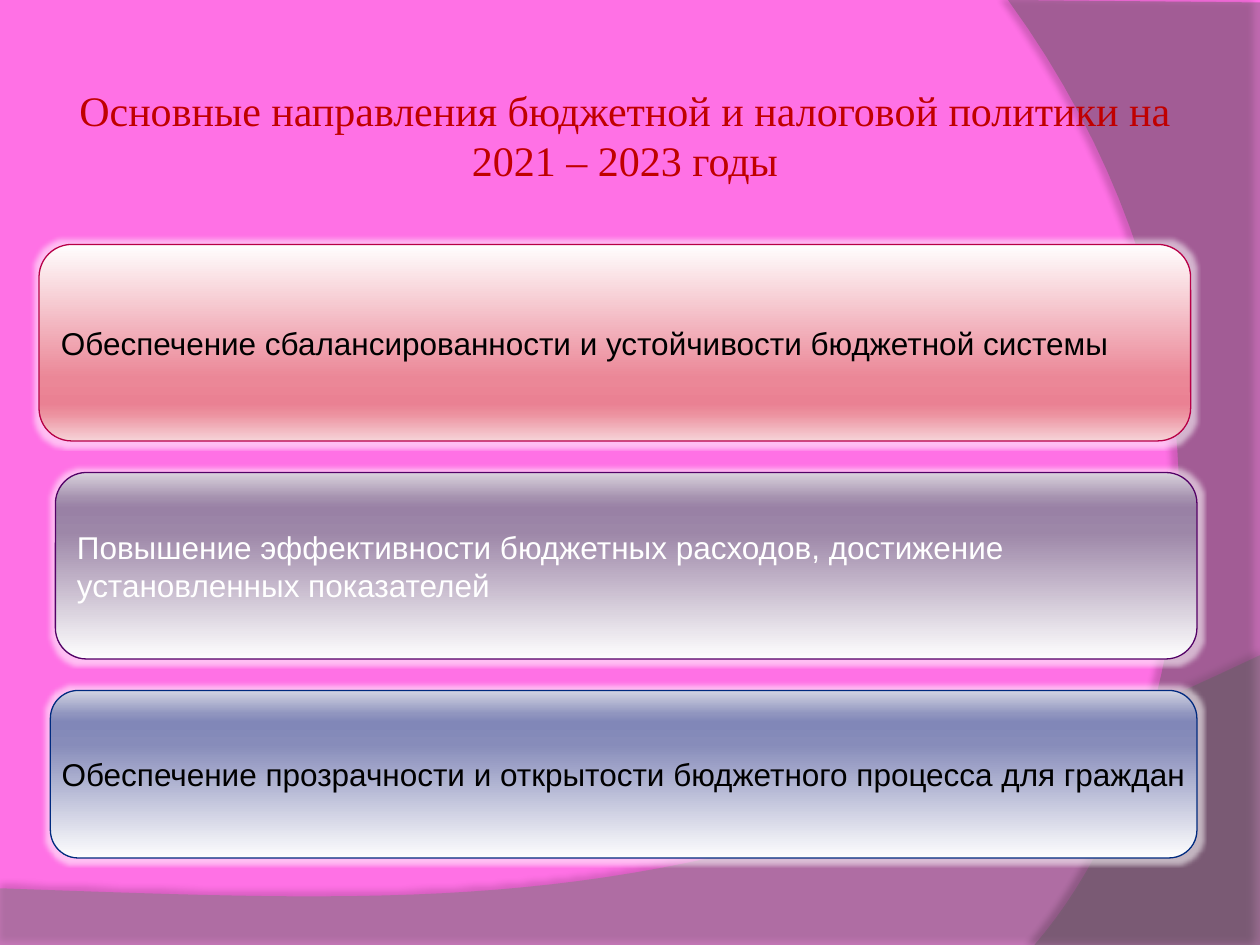
from dataclasses import dataclass

from lxml.etree import SubElement
from pptx import Presentation
from pptx.dml.color import RGBColor
from pptx.enum.shapes import MSO_SHAPE
from pptx.enum.text import MSO_ANCHOR, PP_ALIGN
from pptx.oxml.ns import qn
from pptx.util import Inches, Pt

Point = tuple[float, float]


@dataclass(frozen=True)
class Theme:
    back: str = "FF71E5"
    title: str = "C00000"
    dark: str = "000000"
    light: str = "FFFFFF"
    serif: str = "Times New Roman"
    sans: str = "Arial"
    big: float = 24
    body: float = 18


@dataclass(frozen=True)
class Wave:
    points: list[Point]
    color: str
    alpha: int
    shade: int
    dist: float
    angle: int


@dataclass(frozen=True)
class Card:
    box: tuple[float, float, float, float]
    lines: list[str]
    stops: list[tuple[int, str]]
    edge: str
    ink: str
    align: PP_ALIGN = PP_ALIGN.LEFT
    before: float = 0


THEME = Theme()


def curve(a: Point, b: Point, c: Point, d: Point, steps: int = 40) -> list[Point]:
    """Points along a cubic curve, without its start."""
    def mix(i: int, t: float) -> float:
        s = 1 - t
        return s**3 * a[i] + 3 * s * s * t * b[i] + 3 * s * t * t * c[i] + t**3 * d[i]

    return [(mix(0, n / steps), mix(1, n / steps)) for n in range(1, steps + 1)]


def add_color(node, color: str, alpha: int = 100) -> None:
    tint = SubElement(node, qn("a:srgbClr"), val=color)
    SubElement(tint, qn("a:alpha"), val=str(alpha * 1000))


def effects(shape):
    shape.shadow.inherit = False
    return shape._element.spPr.find(qn("a:effectLst"))


def write(shape, lines: list[str], *, font: str, size: float, color: str,
          align: PP_ALIGN, wrap: bool = True, before: float = 0) -> None:
    frame = shape.text_frame
    frame.word_wrap = wrap
    frame.vertical_anchor = MSO_ANCHOR.MIDDLE
    for i, line in enumerate(lines):
        para = frame.add_paragraph() if i else frame.paragraphs[0]
        para.alignment = align
        para.space_before = Pt(before)
        run = para.add_run()
        run.text = line
        run.font.name = font
        run.font.size = Pt(size)
        run.font.color.rgb = RGBColor.from_string(color)


def draw_wave(slide, wave: Wave) -> None:
    first, *rest = [(Inches(x), Inches(y)) for x, y in wave.points]
    pen = slide.shapes.build_freeform(*first)
    pen.add_line_segments(rest, close=True)
    shape = pen.convert_to_shape()
    shape.line.fill.background()
    shape.fill.solid()
    shape.fill.fore_color.rgb = RGBColor.from_string(wave.color)
    tint = shape._element.spPr.find(qn("a:solidFill")).find(qn("a:srgbClr"))
    SubElement(tint, qn("a:alpha"), val=str(wave.alpha * 1000))
    shade = SubElement(effects(shape), qn("a:outerShdw"), blurRad=str(Pt(4)),
                       dist=str(Pt(wave.dist)), dir=str(wave.angle * 60000),
                       algn="ctr", rotWithShape="0")
    add_color(shade, THEME.dark, wave.shade)


def draw_card(slide, card: Card) -> None:
    shape = slide.shapes.add_shape(MSO_SHAPE.ROUNDED_RECTANGLE, *map(Inches, card.box))
    shape.line.color.rgb = RGBColor.from_string(card.edge)
    shape.line.width = Pt(0.75)

    # Five-stop gradient, top to bottom
    shape.fill.gradient()
    shape.fill.gradient_angle = 270
    stops = shape._element.spPr.find(qn("a:gradFill")).find(qn("a:gsLst"))
    for old in list(stops):
        stops.remove(old)
    for pos, color in card.stops:
        add_color(SubElement(stops, qn("a:gs"), pos=str(pos * 1000)), color)

    # Soft white halo
    add_color(SubElement(effects(shape), qn("a:glow"), rad=str(Pt(5))), THEME.light, 55)
    write(shape, card.lines, font=THEME.sans, size=THEME.body, color=card.ink,
          align=card.align, wrap=False, before=card.before)


def ramp(*colors: str, turn: bool = False) -> list[tuple[int, str]]:
    stops = list(zip((0, 68, 81, 86, 100), colors))
    return [(100 - pos, color) for pos, color in reversed(stops)] if turn else stops


WAVES = [
    Wave([(0, 7.05), (0, 7.51), (10, 7.51), (10, 5.2),
          *curve((10, 5.2), (5.59, 7.29), (3.91, 7.19), (0, 7.05))],
         "7F7F7F", 45, 35, 3.5, 270),
    Wave([(10, 0.02), (10, 7.5), (8.21, 7.5),
          *curve((8.21, 7.5), (9.35, 6.19), (10.18, 3), (8, 0))],
         "5E5E5E", 40, 45, 4, 180),
]

CARDS = [
    Card((0.31, 1.94, 9.14, 1.56),
         ["Обеспечение сбалансированности и устойчивости бюджетной системы"],
         ramp("FFFEFE", "EB8797", "EA8193", "EC909E", "F6D3D8"),
         "B70047", THEME.dark, before=5.3),
    Card((0.44, 3.75, 9.06, 1.48),
         ["Повышение эффективности бюджетных расходов, достижение",
          "установленных показателей"],
         ramp("FEFEFE", "9D87A8", "9981A5", "A490AE", "DAD3DD", turn=True),
         "530066", THEME.light, PP_ALIGN.JUSTIFY),
    Card((0.4, 5.48, 9.1, 1.33),
         ["Обеспечение прозрачности и открытости бюджетного процесса для граждан"],
         ramp("FEFEFE", "878CBA", "8187B8", "9095BF", "D3D5E3", turn=True),
         "002A7F", THEME.dark, PP_ALIGN.CENTER),
]


def main() -> None:
    deck = Presentation()
    deck.slide_width, deck.slide_height = Inches(10), Inches(7.5)
    slide = deck.slides.add_slide(deck.slide_layouts[6])

    # Background
    slide.background.fill.solid()
    slide.background.fill.fore_color.rgb = RGBColor.from_string(THEME.back)
    for wave in WAVES:
        draw_wave(slide, wave)

    # Title
    title = slide.shapes.add_textbox(*map(Inches, (0.46, 0.52, 9, 1.1)))
    frame = title.text_frame
    frame.margin_left = frame.margin_right = Inches(0.05)
    write(title, ["Основные направления бюджетной и налоговой политики на 2021 – 2023 годы"],
          font=THEME.serif, size=THEME.big, color=THEME.title, align=PP_ALIGN.CENTER)

    # Policy goals
    for card in CARDS:
        draw_card(slide, card)

    deck.save("out.pptx")


if __name__ == "__main__":
    main()
